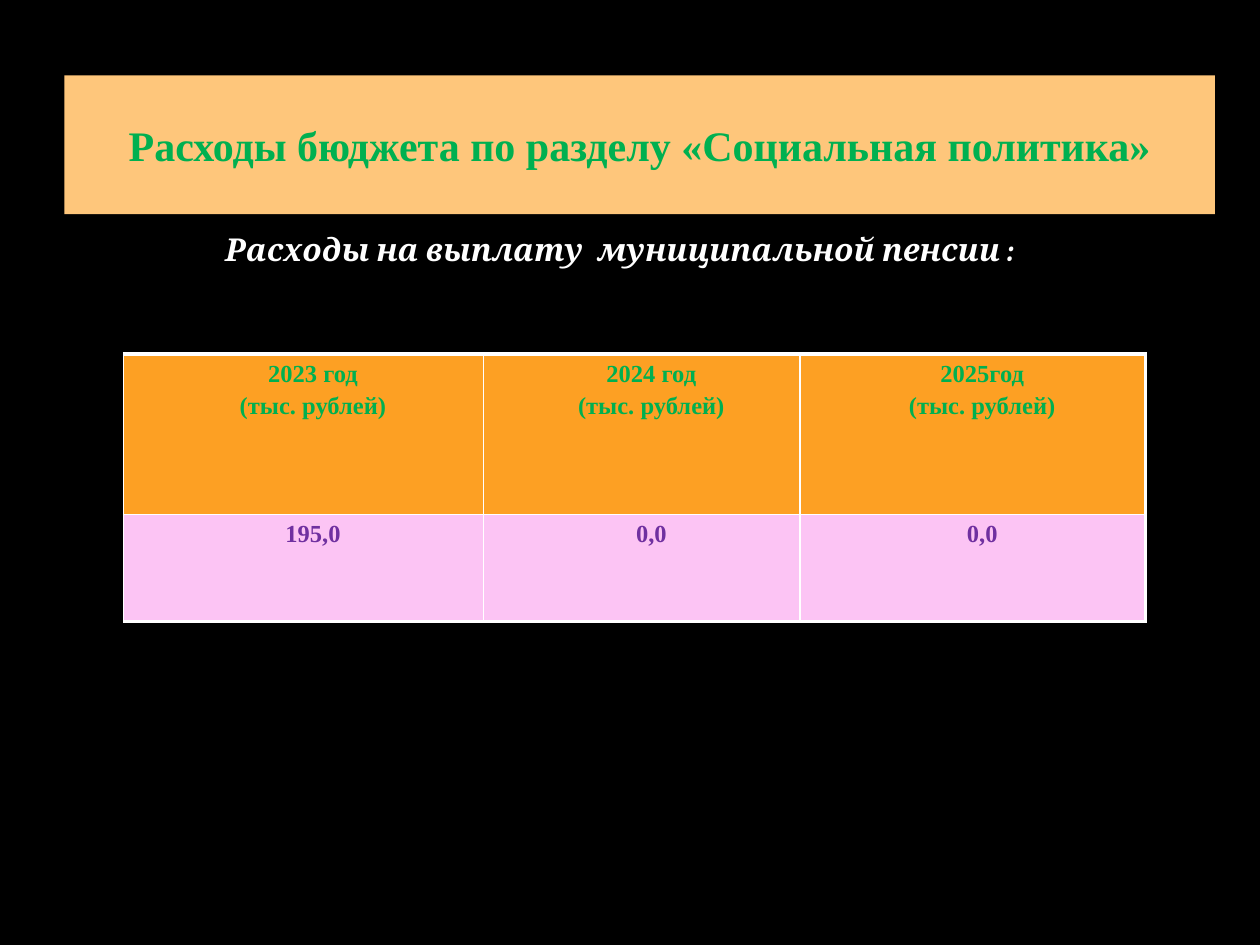
from lxml import etree
from pptx import Presentation
from pptx.dml.color import RGBColor
from pptx.enum import text
from pptx.oxml import ns
from pptx.util import Cm, Pt

COLORS = {
    "background": "000000",
    "banner": "FEC67B",
    "heading": "00B050",
    "caption": "FFFFFF",
    "border": "FFFFFF",
    "header": "FDA023",
    "values": "FCC4F4",
    "amount": "7030A0",
}
SERIF = "Times New Roman"
ROWS = [
    [["2023 год", "(тыс. рублей)"], ["2024 год", "(тыс. рублей)"], ["2025год", "(тыс. рублей)"]],
    [["195,0"], ["0,0"], ["0,0"]],
]


def color(name):
    return RGBColor.from_string(COLORS[name])


def paint(fill, name):
    fill.solid()
    fill.fore_color.rgb = color(name)


def add_xml(parent, tag, **attributes):
    return etree.SubElement(parent, ns.qn(tag), attributes)


def write(para, words, *, size, tint, font=SERIF, italic=False):
    """Put one centred bold span into a paragraph."""
    para.alignment = text.PP_ALIGN.CENTER
    span = para.add_run()
    span.text = words
    span.font.name = font
    span.font.size = Pt(size)
    span.font.bold = True
    span.font.italic = italic
    span.font.color.rgb = color(tint)


def place(item, box):
    item.left, item.top, item.width, item.height = (Cm(length) for length in box)


def add_shadow(shape):
    effects = add_xml(shape._element.spPr, "a:effectLst")
    shadow = add_xml(effects, "a:outerShdw", blurRad=str(Pt(3.5)), dist=str(Pt(2.2)),
                     dir="5400000", rotWithShape="0")
    shade = add_xml(shadow, "a:srgbClr", val="000000")
    add_xml(shade, "a:alpha", val="32000")


def build_banner(page, box):
    """Title placeholder shaped as a rounded band."""
    banner = page.shapes.title
    place(banner, box)
    outline = add_xml(banner._element.spPr, "a:prstGeom", prst="roundRect")
    add_xml(outline, "a:avLst")
    paint(banner.fill, "banner")
    banner.line.fill.background()
    add_shadow(banner)
    frame = banner.text_frame
    frame.word_wrap = True
    frame.auto_size = text.MSO_AUTO_SIZE.NONE
    frame.vertical_anchor = text.MSO_ANCHOR.MIDDLE
    write(frame.paragraphs[0], "Расходы бюджета по разделу «Социальная политика»",
          size=24, tint="heading")


def build_caption(page, box):
    caption = page.shapes.add_textbox(*(Cm(length) for length in box))
    frame = caption.text_frame
    frame.word_wrap = True
    write(frame.paragraphs[0], "Расходы на выплату  муниципальной пенсии :",
          size=18, tint="caption", font="Cambria", italic=True)


def set_borders(cell, widths):
    """Draw the left, right, top and bottom lines ahead of the cell fill."""
    properties = cell._tc.get_or_add_tcPr()
    for index, (side, width) in enumerate(widths.items()):
        line = etree.Element(ns.qn(f"a:ln{side}"), w=str(Pt(width)))
        fill = add_xml(line, "a:solidFill")
        add_xml(fill, "a:srgbClr", val=COLORS["border"])
        properties.insert(index, line)


def fill_cell(cell, lines, tint):
    frame = cell.text_frame
    for index, words in enumerate(lines):
        para = frame.paragraphs[0] if index == 0 else frame.add_paragraph()
        write(para, words, size=14, tint=tint)
        # Indent, and space before as a share of the line
        properties = para._p.get_or_add_pPr()
        properties.set("marL", str(Cm(0.38)))
        properties.set("indent", "0")
        add_xml(add_xml(properties, "a:spcBef"), "a:spcPct", val="20000")


def build_table(page, box, widths, heights):
    table = page.shapes.add_table(len(ROWS), len(ROWS[0]),
                                  *(Cm(length) for length in box)).table
    for column, width in zip(table.columns, widths):
        column.width = Cm(width)
    for row, height in zip(table.rows, heights):
        row.height = Cm(height)
    last_row, last_column = len(ROWS) - 1, len(ROWS[0]) - 1
    for r, row in enumerate(ROWS):
        for c, lines in enumerate(row):
            cell = table.cell(r, c)
            paint(cell.fill, "values" if r else "header")
            fill_cell(cell, lines, "amount" if r else "heading")
            # Heavier lines on the top, right and bottom edges
            set_borders(cell, {
                "L": 1,
                "R": 2.25 if c == last_column else 1,
                "T": 2.25 if r == 0 else 1,
                "B": 2.25 if r == last_row else 1,
            })


def main():
    deck = Presentation()
    deck.slide_width, deck.slide_height = Cm(25.4), Cm(19.05)
    page = deck.slides.add_slide(deck.slide_layouts.get_by_name("Title Only"))
    paint(page.background.fill, "background")
    build_banner(page, (1.3, 1.52, 23.19, 2.8))
    build_caption(page, (0.69, 4.52, 23.6, 0.86))
    build_table(page, (2.49, 7.14, 20.6, 5.4), widths=(7.26, 6.38, 6.96), heights=(3.23, 2.16))
    deck.save("out.pptx")


if __name__ == "__main__":
    main()
